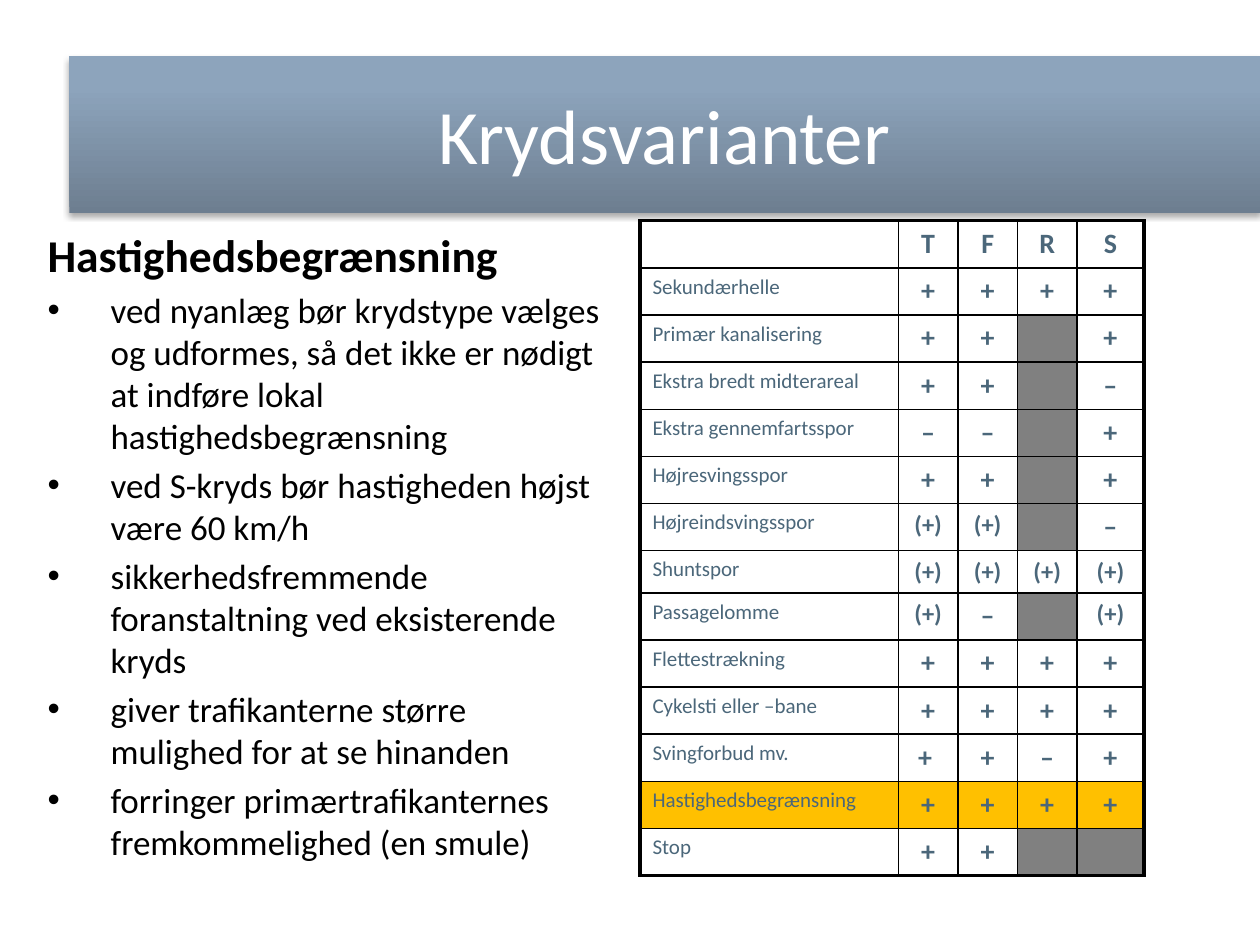
from lxml import etree
from pptx import Presentation
from pptx.dml.color import RGBColor
from pptx.enum.shapes import MSO_SHAPE
from pptx.enum.text import MSO_ANCHOR, PP_ALIGN
from pptx.oxml import parse_xml
from pptx.oxml.ns import nsdecls, qn
from pptx.util import Cm, Pt

RECT = MSO_SHAPE.RECTANGLE
MIDDLE = MSO_ANCHOR.MIDDLE
LEFT, CENTER = PP_ALIGN.LEFT, PP_ALIGN.CENTER

HUES = {
    "black": "000000",
    "white": "FFFFFF",
    "slate": "4B677A",
    "grey": "808080",
    "gold": "FFC000",
    "dark": "6D7E90",
    "mid": "8DA4BC",
    "light": "8DA4BD",
}
POINTS = [
    "ved nyanlæg bør krydstype vælges og udformes, så det ikke er nødigt "
    "at indføre lokal hastighedsbegrænsning",
    "ved S-kryds bør hastigheden højst være 60 km/h",
    "sikkerhedsfremmende foranstaltning ved eksisterende kryds",
    "giver trafikanterne større mulighed for at se hinanden",
    "forringer primærtrafikanternes fremkommelighed (en smule)",
]
THEME = "Hastighedsbegrænsning"
GRID = [
    ["", "T", "F", "R", "S"],
    ["Sekundærhelle", "+", "+", "+", "+"],
    ["Primær kanalisering", "+", "+", "", "+"],
    ["Ekstra bredt midterareal", "+", "+", "", "–"],
    ["Ekstra gennemfartsspor", "–", "–", "", "+"],
    ["Højresvingsspor", "+", "+", "", "+"],
    ["Højreindsvingsspor", "(+)", "(+)", "", "–"],
    ["Shuntspor", "(+)", "(+)", "(+)", "(+)"],
    ["Passagelomme", "(+)", "–", "", "(+)"],
    ["Flettestrækning", "+", "+", "+", "+"],
    ["Cykelsti eller –bane", "+", "+", "+", "+"],
    ["Svingforbud mv.", "+ ", "+", "–", "+"],
    [THEME, "+", "+", "+", "+"],
    ["Stop", "+", "+", "", ""],
]
WIDTHS = [5.21, 1.2, 1.2, 1.2, 1.35]
HEIGHTS = [0.85 if row[0] == "Shuntspor" else 0.95 for row in GRID]


class Deck:
    font = "Calibri"
    thick, thin = 2.25, 1

    def __init__(self, wide, high):
        self.show = Presentation()
        self.show.slide_width, self.show.slide_height = Cm(wide), Cm(high)
        self.slide = self.show.slides.add_slide(self.show.slide_layouts[6])

    def text(self, para, words, size, hue, bold=False):
        run = para.add_run()
        run.text = words
        run.font.name, run.font.size, run.font.bold = self.font, Pt(size), bold
        run.font.color.rgb = RGBColor.from_string(HUES[hue])

    def banner(self, words, box):
        shape = self.slide.shapes.add_shape(RECT, *map(Cm, box))
        shape.line.fill.background()
        stops = "".join(
            f'<a:gs pos="{spot * 1000}"><a:srgbClr val="{HUES[hue]}"/></a:gs>'
            for spot, hue in ((0, "dark"), (80, "mid"), (100, "light"))
        )
        blend = parse_xml(
            f'<a:gradFill {nsdecls("a")} rotWithShape="1"><a:gsLst>{stops}</a:gsLst>'
            '<a:lin ang="16200000" scaled="0"/></a:gradFill>'
        )
        shade = parse_xml(
            f'<a:effectLst {nsdecls("a")}><a:outerShdw blurRad="{Pt(3.1)}" '
            f'dist="{Pt(1.8)}" dir="5400000" rotWithShape="0">'
            f'<a:srgbClr val="{HUES["black"]}"><a:alpha val="35000"/></a:srgbClr>'
            "</a:outerShdw></a:effectLst>"
        )
        props = shape._element.spPr
        props.find(qn("a:prstGeom")).addnext(blend)
        props.append(shade)
        frame = shape.text_frame
        frame.word_wrap, frame.vertical_anchor = True, MIDDLE
        para = frame.paragraphs[0]
        para.alignment = CENTER
        self.text(para, words, 44, "white")

    def list(self, head, points, box):
        frame = self.slide.shapes.add_textbox(*map(Cm, box)).text_frame
        frame.word_wrap = True
        self.text(frame.paragraphs[0], head, 26, "black", True)
        for words in points:
            para = frame.add_paragraph()
            props = para._p.get_or_add_pPr()
            props.set("marL", str(Cm(1.27)))
            props.set("indent", str(Cm(-1.27)))
            etree.SubElement(props, qn("a:buFont")).set("typeface", "Arial")
            etree.SubElement(props, qn("a:buChar")).set("char", "•")
            para.space_before = Pt(4)
            self.text(para, words, 20, "black")

    def edge(self, cell, sides):
        props = cell._tc.get_or_add_tcPr()
        for side, outer in sides.items():
            width = Pt(self.thick if outer else self.thin)
            props.append(parse_xml(
                f'<a:ln{side} {nsdecls("a")} w="{width}"><a:solidFill>'
                f'<a:srgbClr val="{HUES["black"]}"/></a:solidFill></a:ln{side}>'
            ))

    def cell(self, cell, words, size, hue, align):
        cell.fill.solid()
        cell.fill.fore_color.rgb = RGBColor.from_string(HUES[hue])
        para = cell.text_frame.paragraphs[0]
        para.alignment = align
        if words:
            self.text(para, words, size, "slate", align == CENTER)
        else:
            etree.SubElement(para._p, qn("a:endParaRPr")).set("sz", str(size * 100))

    def table(self, grid, widths, heights, left, top):
        frame = self.slide.shapes.add_table(
            len(grid), len(widths), Cm(left), Cm(top), Cm(sum(widths)), Cm(sum(heights))
        )
        table = frame.table
        table.first_row = table.horz_banding = False
        for col, width in zip(table.columns, widths):
            col.width = Cm(width)
        for r, (row, height) in enumerate(zip(grid, heights)):
            table.rows[r].height = Cm(height)
            for c, words in enumerate(row):
                cell = table.cell(r, c)
                self.edge(cell, {
                    "L": c == 0,
                    "R": c == len(row) - 1,
                    "T": r == 0,
                    "B": r == len(grid) - 1,
                })
                hue = "gold" if row[0] == THEME else "white"
                if c and not words:
                    hue = "grey"
                size = 12 if c == 0 else 14 if words == "(+)" else 16
                self.cell(cell, words, size, hue, CENTER if c else LEFT)


def main():
    deck = Deck(25.4, 19.05)
    deck.banner("Krydsvarianter", (1.4, 1.12, 24, 3.17))
    deck.list(THEME, POINTS, (0.71, 4.45, 11.79, 13.69))
    deck.table(GRID, WIDTHS, HEIGHTS, 12.9, 4.45)
    deck.show.save("out.pptx")


if __name__ == "__main__":
    main()
